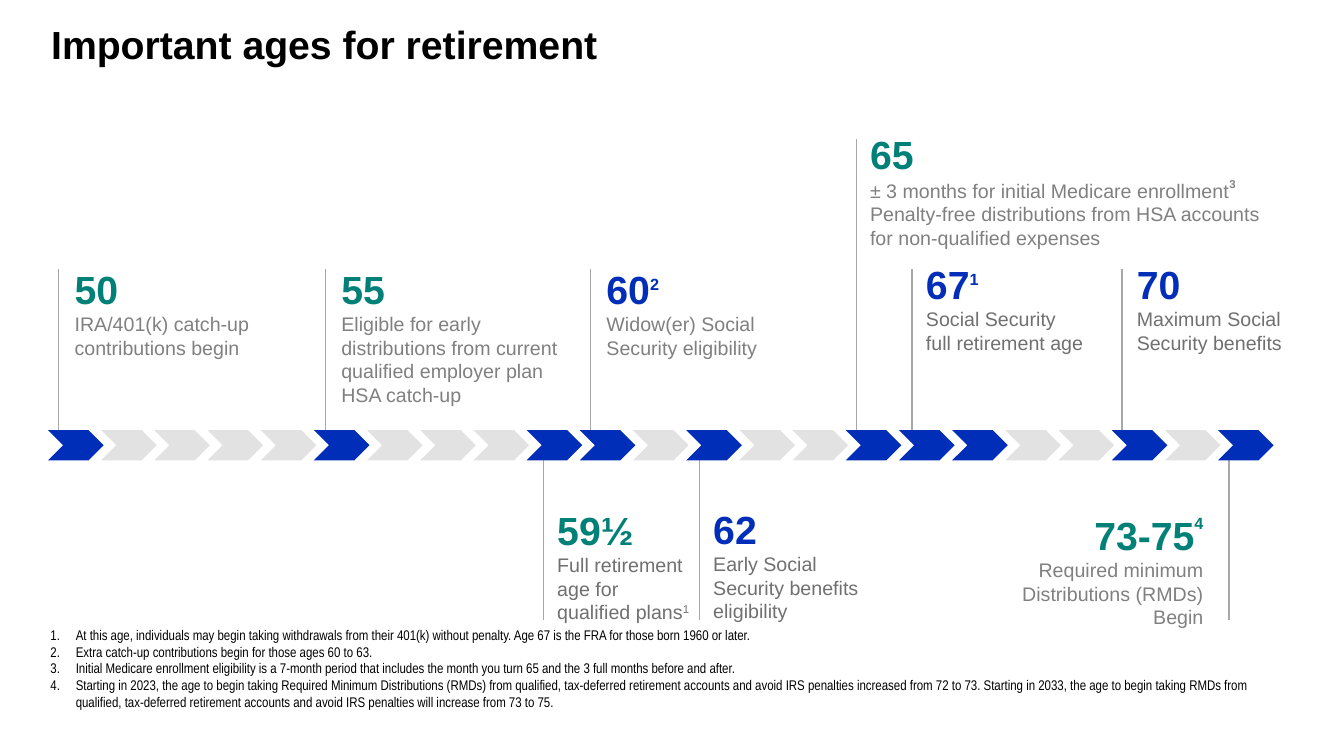
from pptx import Presentation
from pptx.dml.color import RGBColor
from pptx.enum.shapes import MSO_CONNECTOR, MSO_SHAPE
from pptx.enum.text import MSO_ANCHOR, MSO_AUTO_SIZE, PP_ALIGN
from pptx.oxml.ns import qn
from pptx.util import Cm, Pt
from lxml.etree import SubElement

TEAL, BLUE, BLACK, WHITE = "008077", "002EB8", "000000", "FFFFFF"
LIGHT, DARK, RULE, PALE = "808080", "707070", "A7A7A7", "E2E2E2"
BAND_TOP, BAND_HEIGHT = 10.84, 0.76


def add_text_box(left, top, width, height, inset=True):
    box = page.shapes.add_textbox(Cm(left), Cm(top), Cm(width), Cm(height))
    frame = box.text_frame
    frame.word_wrap = True
    if not inset:
        frame.margin_left = frame.margin_right = 0
        frame.margin_top = frame.margin_bottom = 0
    return box


def add_span(para, text, size, color, bold=False, raised=0, font="Arial"):
    """Append one run; raised is the superscript offset in percent."""
    span = para.add_run()
    span.text = text
    span.font.name = font
    span.font.size = Pt(size)
    span.font.bold = bold
    span.font.color.rgb = RGBColor.from_string(color)
    if raised:
        span.font._element.set("baseline", str(raised * 1000))


deck = Presentation()
deck.slide_width, deck.slide_height = Cm(33.86), Cm(19.05)
page = deck.slides.add_slide(deck.slide_layouts[6])

title = add_text_box(1.29, 0.51, 24.13, 2.16, inset=False)
add_span(title.text_frame.paragraphs[0], "Important ages for retirement", 28, BLACK, True)

# Each milestone: place, inset, white fill, alignment, then paragraphs of spans
# (text, size, color, bold, raised); None stands for a line break
milestones = [
    ((1.63, 6.55, 6.45, 3.3), True, True, PP_ALIGN.LEFT, [
        [("50", 28, TEAL, True)],
        [("IRA/401(k) catch-up contributions begin", 14, LIGHT)]]),
    ((8.35, 6.55, 6.76, 3.3), True, True, PP_ALIGN.LEFT, [
        [("55", 28, TEAL, True)],
        [("Eligible for early distributions from current qualified employer plan", 14, LIGHT)],
        [("HSA catch-up", 14, LIGHT)]]),
    ((15.03, 6.55, 4.95, 3.3), True, False, PP_ALIGN.LEFT, [
        [("60", 28, BLUE, True), ("2", 20, BLUE, True, 50)],
        [("Widow(er) Social Security eligibility", 14, LIGHT)]]),
    ((14.04, 12.75, 3.4, 3.3), False, True, PP_ALIGN.LEFT, [
        [("59½", 28, TEAL, True)],
        [("Full retirement age for qualified plans", 14, DARK), ("1", 14, DARK, False, 30)]]),
    ((17.97, 12.73, 3.96, 3.3), False, True, PP_ALIGN.LEFT, [
        [("62", 28, BLUE, True)],
        [("Early Social Security benefits eligibility", 14, DARK)]]),
    ((21.67, 3.15, 10.9, 2.39), True, False, PP_ALIGN.LEFT, [
        [("65", 28, TEAL, True)],
        [("± 3 months for initial Medicare enrollment", 14, LIGHT), ("3", 14, LIGHT, True, 50)],
        [("Penalty-free distributions from HSA accounts for non-qualified expenses", 14, LIGHT)]]),
    ((23.33, 6.55, 4.55, 3.3), False, True, PP_ALIGN.LEFT, [
        [("67", 28, BLUE, True), ("1", 20, BLUE, True, 50)],
        [("Social Security", 14, DARK), None, ("full retirement age", 14, DARK)]]),
    ((25.16, 12.75, 5.41, 3.3), True, False, PP_ALIGN.RIGHT, [
        [("73-75", 28, TEAL, True), ("4", 20, TEAL, True, 75)],
        [("Required minimum Distributions (RMDs) Begin", 14, LIGHT)]]),
    ((28.64, 6.55, 4.32, 3.3), False, True, PP_ALIGN.LEFT, [
        [("70", 28, BLUE, True)],
        [("Maximum Social Security benefits", 14, DARK)]]),
]
for place, inset, filled, align, paragraphs in milestones:
    box = add_text_box(*place, inset=inset)
    if filled:
        box.fill.solid()
        box.fill.fore_color.rgb = RGBColor.from_string(WHITE)
    frame = box.text_frame
    for index, spans in enumerate(paragraphs):
        para = frame.add_paragraph() if index else frame.paragraphs[0]
        para.alignment = align
        for span in spans:
            if span:
                add_span(para, *span)
            else:
                para.add_line_break()

# Marker lines rise from the band or hang below it
markers = [(x, BAND_TOP, 6.78) for x in (1.48, 8.2, 14.88, 22.98, 28.27)]
markers += [(x, 15.62, 11.56) for x in (13.69, 17.63, 30.96)]
markers.append((21.58, BAND_TOP, 3.5))
for x, start, end in markers:
    marker = page.shapes.add_connector(
        MSO_CONNECTOR.STRAIGHT, Cm(x), Cm(start), Cm(x), Cm(end))
    marker.line.color.rgb = RGBColor.from_string(RULE)
    marker.line.width = Pt(1)
    SubElement(marker._element.spPr, qn("a:effectLst"))

# One chevron per year from 50 on, key years in blue
key_years = {50, 55, 59, 60, 62, 65, 66, 67, 70, 72}
for year in range(50, 73):
    chevron = page.shapes.add_shape(
        MSO_SHAPE.CHEVRON, Cm(1.21 + 1.34 * (year - 50)), Cm(BAND_TOP),
        Cm(1.4), Cm(BAND_HEIGHT))
    chevron.shadow.inherit = False
    chevron.fill.solid()
    chevron.fill.fore_color.rgb = RGBColor.from_string(BLUE if year in key_years else PALE)
    chevron.line.fill.background()

footnotes = [
    "At this age, individuals may begin taking withdrawals from their 401(k) without penalty. "
    "Age 67 is the FRA for those born 1960 or later.",
    "Extra catch-up contributions begin for those ages 60 to 63.",
    "Initial Medicare enrollment eligibility is a 7-month period that includes the month "
    "you turn 65 and the 3 full months before and after.",
    "Starting in 2023, the age to begin taking Required Minimum Distributions (RMDs) from "
    "qualified, tax-deferred retirement accounts and avoid IRS penalties increased from 72 to 73. "
    "Starting in 2033, the age to begin taking RMDs from qualified, tax-deferred retirement "
    "accounts and avoid IRS penalties will increase from 73 to 75.",
]
notes_frame = add_text_box(1.27, 15.77, 31.32, 2.13, inset=False).text_frame
notes_frame.vertical_anchor = MSO_ANCHOR.BOTTOM
notes_frame.auto_size = MSO_AUTO_SIZE.SHAPE_TO_FIT_TEXT
for index, footnote in enumerate(footnotes):
    para = notes_frame.add_paragraph() if index else notes_frame.paragraphs[0]
    properties = para._p.get_or_add_pPr()
    properties.set("marL", str(Cm(0.64)))
    properties.set("indent", str(-Cm(0.64)))
    SubElement(properties, qn("a:buFont"), typeface="+mj-lt")
    SubElement(properties, qn("a:buAutoNum"), type="arabicPeriod")
    add_span(para, footnote, 10, BLACK, font="Arial Narrow")

deck.save("out.pptx")
